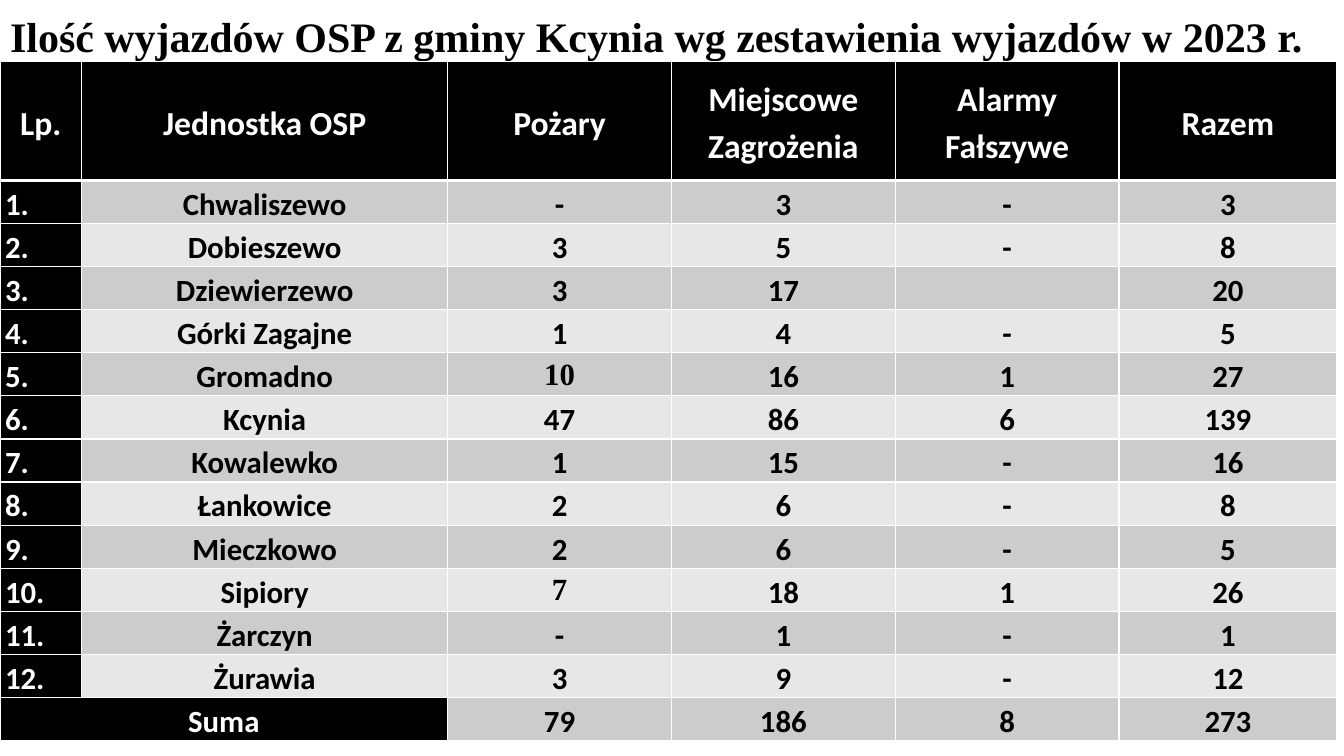
from dataclasses import dataclass
from typing import Any

import pptx
import pptx.dml.color
import pptx.enum.text
import pptx.oxml
import pptx.oxml.ns
import pptx.util
from pptx.util import Inches

ALIGN = pptx.enum.text.PP_ALIGN
ANCHOR = pptx.enum.text.MSO_ANCHOR


# Colours, fonts and sizes
@dataclass(frozen=True)
class Theme:
    black: str = "000000"
    white: str = "FFFFFF"
    bands: tuple[str, str] = ("CCCCCC", "E7E7E7")
    body_font: str = "Calibri"
    serif_font: str = "Times New Roman"
    title_size: int = 30
    header_size: int = 24
    body_size: int = 22
    thin_border: float = 1
    thick_border: float = 3


@dataclass(frozen=True)
class Brigade:
    name: str
    fires: str
    local_threats: str
    false_alarms: str
    total: str
    serif_fires: bool = False


@dataclass(frozen=True)
class CellStyle:
    fill: str
    color: str
    size: int = 22
    font: str = "Calibri"
    align: Any = ALIGN.CENTER
    anchor: Any = ANCHOR.TOP
    top_border: float = 1
    bottom_border: float = 1


THEME = Theme()
TITLE = "Ilość wyjazdów OSP z gminy Kcynia wg zestawienia wyjazdów w 2023 r."
HEADERS = ["Lp.", "Jednostka OSP", "Pożary", "Miejscowe Zagrożenia",
           "Alarmy Fałszywe", "Razem"]
BRIGADES = [
    Brigade("Chwaliszewo", "-", "3", "-", "3"),
    Brigade("Dobieszewo", "3", "5", "-", "8"),
    Brigade("Dziewierzewo", "3", "17", "", "20"),
    Brigade("Górki Zagajne", "1", "4", "-", "5"),
    Brigade("Gromadno", "10", "16", "1", "27", serif_fires=True),
    Brigade("Kcynia", "47", "86", "6", "139"),
    Brigade("Kowalewko", "1", "15", "-", "16"),
    Brigade("Łankowice", "2", "6", "-", "8"),
    Brigade("Mieczkowo", "2", "6", "-", "5"),
    Brigade("Sipiory", "7", "18", "1", "26", serif_fires=True),
    Brigade("Żarczyn", "-", "1", "-", "1"),
    Brigade("Żurawia", "3", "9", "-", "12"),
]
SUMS = ["Suma", "", "79", "186", "8", "273"]
COLUMN_WIDTHS = [0.81, 3.63, 2.22, 2.22, 2.22, 2.16]
HEADER_HEIGHT, ROW_HEIGHT = 1.18, 0.42


def apply_format(target: Any, values: dict[str, Any]) -> None:
    for attribute, value in values.items():
        setattr(target, attribute, value)


def format_font(font: Any, name: str, size: int, color: str) -> None:
    apply_format(font, {"name": name, "size": pptx.util.Pt(size), "bold": True})
    font.color.rgb = pptx.dml.color.RGBColor.from_string(color)


def add_borders(cell: Any, style: CellStyle) -> None:
    widths = {"lnL": THEME.thin_border, "lnR": THEME.thin_border,
              "lnT": style.top_border, "lnB": style.bottom_border}
    properties = cell._tc.get_or_add_tcPr()
    for side, width in widths.items():
        properties.append(pptx.oxml.parse_xml(
            f'<a:{side} {pptx.oxml.ns.nsdecls("a")} w="{pptx.util.Pt(width)}">'
            f'<a:solidFill><a:srgbClr val="{THEME.white}"/></a:solidFill>'
            f'</a:{side}>'))


def draw_cell(cell: Any, text: str, style: CellStyle) -> None:
    add_borders(cell, style)
    cell.fill.solid()
    cell.fill.fore_color.rgb = pptx.dml.color.RGBColor.from_string(style.fill)
    apply_format(cell, {
        "vertical_anchor": style.anchor,
        "margin_left": Inches(0.05), "margin_right": Inches(0.05),
        "margin_top": 0, "margin_bottom": 0,
    })
    if text:
        paragraph = cell.text_frame.paragraphs[0]
        paragraph.text = text
        apply_format(paragraph, {"alignment": style.align, "line_spacing": 1.15})
        format_font(paragraph.runs[0].font, style.font, style.size, style.color)


def cell_style(row: int, column: int) -> CellStyle:
    if row == 0:
        return CellStyle(THEME.black, THEME.white, THEME.header_size,
                         THEME.body_font, anchor=ANCHOR.MIDDLE,
                         bottom_border=THEME.thick_border)
    is_sum = row > len(BRIGADES)
    is_label = column == 0 or (is_sum and column == 1)
    serif = not is_sum and column == 2 and BRIGADES[row - 1].serif_fires
    return CellStyle(
        fill=THEME.black if is_label else THEME.bands[(row - 1) % 2],
        color=THEME.white if is_label else THEME.black,
        size=THEME.body_size,
        font=THEME.serif_font if serif else THEME.body_font,
        align=ALIGN.LEFT if is_label and not is_sum else ALIGN.CENTER,
        top_border=THEME.thick_border if row == 1 else THEME.thin_border)


def draw_title(slide: Any) -> None:
    heading = slide.shapes.title
    apply_format(heading, {"left": 0, "top": 0, "width": Inches(13.33),
                           "height": Inches(1.2)})
    # The bottom margin lifts the heading above the table
    apply_format(heading.text_frame, {
        "text": TITLE, "word_wrap": True, "vertical_anchor": ANCHOR.MIDDLE,
        "auto_size": pptx.enum.text.MSO_AUTO_SIZE.NONE,
        "margin_bottom": Inches(0.48),
    })
    paragraph = heading.text_frame.paragraphs[0]
    apply_format(paragraph, {"alignment": ALIGN.LEFT, "line_spacing": 0.9})
    format_font(paragraph.runs[0].font, THEME.serif_font, THEME.title_size,
                THEME.black)


def draw_departures(slide: Any) -> None:
    rows = [HEADERS]
    for number, unit in enumerate(BRIGADES, 1):
        rows.append([f"{number}.", unit.name, unit.fires, unit.local_threats,
                     unit.false_alarms, unit.total])
    rows.append(SUMS)

    height = HEADER_HEIGHT + ROW_HEIGHT * (len(rows) - 1)
    departures = slide.shapes.add_table(
        len(rows), len(HEADERS), 0, Inches(0.61),
        Inches(sum(COLUMN_WIDTHS)), Inches(height)).table
    departures.horz_banding = False
    for column, width in zip(departures.columns, COLUMN_WIDTHS):
        column.width = Inches(width)
    for index, row in enumerate(departures.rows):
        row.height = Inches(ROW_HEIGHT if index else HEADER_HEIGHT)
        for column, text in enumerate(rows[index]):
            draw_cell(row.cells[column], text, cell_style(index, column))
    last = len(rows) - 1
    departures.cell(last, 0).merge(departures.cell(last, 1))


def main() -> None:
    presentation = pptx.Presentation()
    apply_format(presentation, {"slide_width": Inches(13.33),
                                "slide_height": Inches(7.5)})
    slide = presentation.slides.add_slide(presentation.slide_layouts[5])
    draw_title(slide)
    draw_departures(slide)
    presentation.save("out.pptx")


if __name__ == "__main__":
    main()
